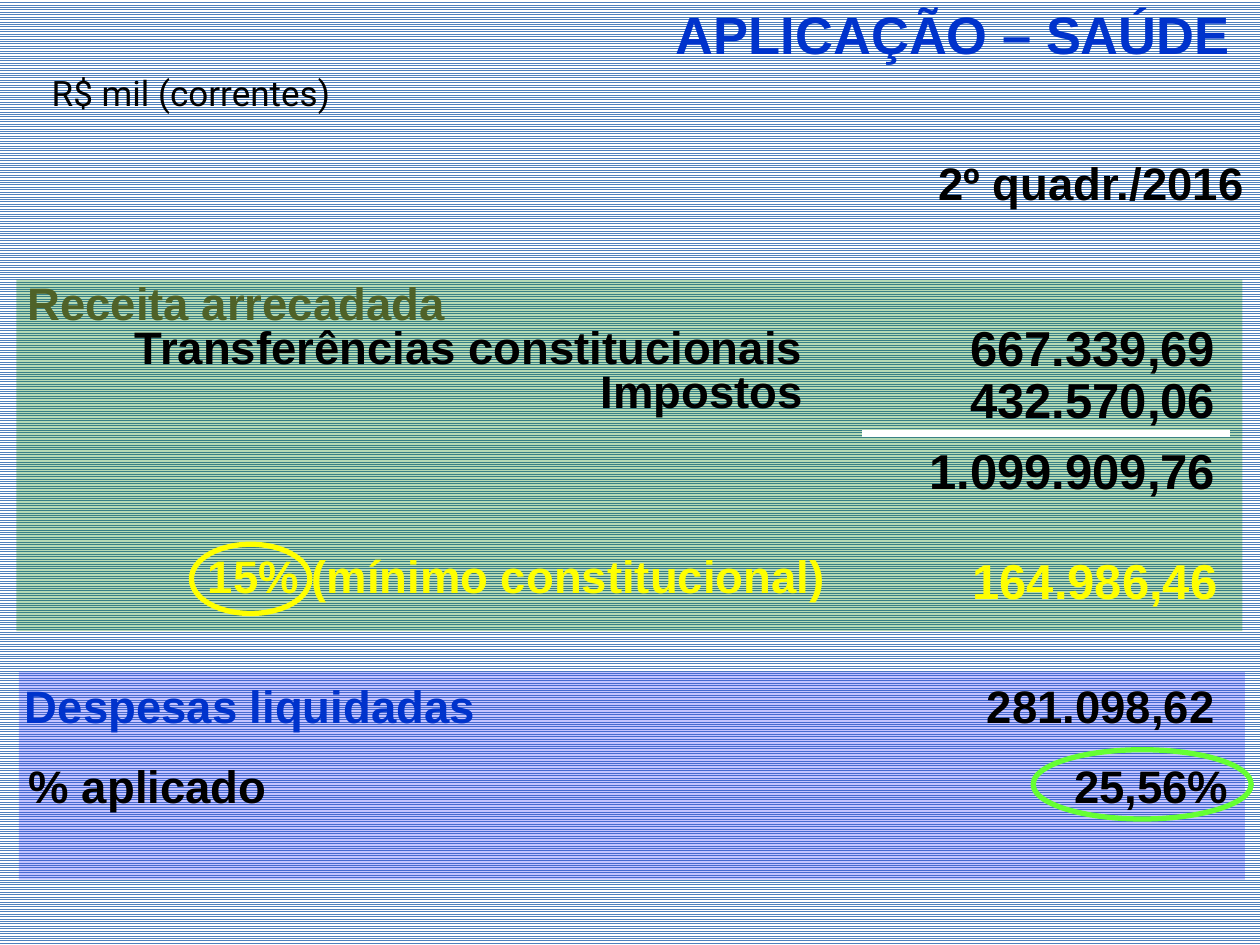
from lxml.etree import SubElement
from pptx import Presentation
from pptx.dml.color import RGBColor
from pptx.enum.dml import MSO_PATTERN
from pptx.enum.shapes import MSO_CONNECTOR, MSO_SHAPE
from pptx.enum.text import MSO_AUTO_SIZE, PP_ALIGN
from pptx.oxml.ns import qn
from pptx.util import Pt

BLACK = RGBColor(0x00, 0x00, 0x00)
WHITE = RGBColor(0xFF, 0xFF, 0xFF)
STRIPE = RGBColor(0x4F, 0x81, 0xBD)
BLUE = RGBColor(0x00, 0x33, 0xCC)
OLIVE = RGBColor(0x4F, 0x62, 0x28)
YELLOW = RGBColor(0xFF, 0xFF, 0x00)
LIME = RGBColor(0x66, 0xFF, 0x33)
REVENUE_FILL = RGBColor(0x00, 0x80, 0x00)
EXPENSE_FILL = RGBColor(0x33, 0x33, 0xFF)


def add_text(slide, box, text, color=BLACK, size=26, align=PP_ALIGN.RIGHT,
             font="Arial", bold=True, wrap=True, spacing=1.0):
    """Add a one-line text box."""
    shape = slide.shapes.add_textbox(*map(Pt, box))
    frame = shape.text_frame
    frame.word_wrap = wrap
    frame.auto_size = MSO_AUTO_SIZE.SHAPE_TO_FIT_TEXT
    paragraph = frame.paragraphs[0]
    paragraph.alignment = align
    paragraph.line_spacing = spacing
    run = paragraph.add_run()
    run.text = text
    run.font.name = font
    run.font.size = Pt(size)
    run.font.bold = bold
    run.font.color.rgb = color


def add_panel(slide, box, color):
    """Add a translucent rectangle."""
    shape = slide.shapes.add_shape(MSO_SHAPE.RECTANGLE, *map(Pt, box))
    shape.shadow.inherit = False
    shape.fill.solid()
    shape.fill.fore_color.rgb = color
    shape.line.fill.background()
    color_element = shape.fill._xPr.find(qn("a:solidFill"))[0]
    SubElement(color_element, qn("a:alpha"), val="29000")


def add_ring(slide, box, color):
    """Add an unfilled ellipse around a figure."""
    shape = slide.shapes.add_shape(MSO_SHAPE.OVAL, *map(Pt, box))
    shape.shadow.inherit = False
    shape.fill.background()
    shape.line.color.rgb = color
    shape.line.width = Pt(3)


def add_sum_line(slide, left, right, y):
    """Add the horizontal rule above a total."""
    line = slide.shapes.add_connector(
        MSO_CONNECTOR.STRAIGHT, Pt(left), Pt(y), Pt(right), Pt(y))
    line.line.color.rgb = WHITE
    line.line.width = Pt(4.5)
    SubElement(line._element.spPr, qn("a:effectLst"))


def add_header(slide, box):
    """Place the title, the unit and the period."""
    left, top, width, height = box
    add_text(slide, (left, top - 2.2, width - 10, 44), "APLICAÇÃO – SAÚDE", BLUE, 30)
    add_text(slide, (left + 20.2, top + 37.4, 175.7, 31.7), "R$ mil (correntes)",
             size=20, font="Roboto", bold=False, wrap=False)
    add_text(slide, (left + width - 206.6, top + 93.6, 204.5, 29.5),
             "2º quadr./2016", spacing=0.7)


def add_revenue(slide, box):
    """Place the revenue panel with its sum and constitutional minimum."""
    left, top, width, height = box
    add_panel(slide, box, REVENUE_FILL)
    add_text(slide, (left - 0.8, top + 2.2, 311.8, 29.5), "Receita arrecadada",
             OLIVE, align=PP_ALIGN.LEFT, spacing=0.7)
    labels = [
        (18.8, 464, "Transferências constitucionais ", BLACK),
        (44, 464, "Impostos ", BLACK),
        (149.8, 469.4, "15% (mínimo constitucional)", YELLOW),
    ]
    for y, right, text, color in labels:
        add_text(slide, (left + 10, top + y, right - 10, 38.2), text, color)
    values = [
        (18, 692, "667.339,69", BLACK),
        (47.6, 692, "432.570,06", BLACK),
        (88.6, 692, "1.099.909,76", BLACK),
        (151.2, 693.3, "164.986,46", YELLOW),
    ]
    for y, right, text, color in values:
        add_text(slide, (left + right - 183, top + y, 183, 41), text, color, 28)
    add_ring(slide, (left + 100, top + 151.2, 67.7, 39.6), YELLOW)
    add_sum_line(slide, left + 483.1, left + 693.3, top + 87.9)


def add_expenses(slide, box):
    """Place the expense panel with the share applied."""
    left, top, width, height = box
    add_panel(slide, box, EXPENSE_FILL)
    rows = [
        (0, -3.6, "Despesas liquidadas", BLUE, 690.5, "281.098,62"),
        (46, -1.4, "% aplicado", BLACK, 698.4, "25,56%"),
    ]
    for y, x, label, color, right, value in rows:
        add_text(slide, (left + x, top + y, 380, 38.2), label, color,
                 align=PP_ALIGN.LEFT)
        add_text(slide, (left + right - 176, top + y, 176, 38.2), value)
    add_ring(slide, (left + 579.6, top + 44.6, 124.6, 39.6), LIME)


def main():
    """Build the slide and save it."""
    presentation = Presentation()
    presentation.slide_width = Pt(720)
    presentation.slide_height = Pt(540)
    slide = presentation.slides.add_slide(presentation.slide_layouts[6])
    background = slide.background.fill
    background.patterned()
    background.pattern = MSO_PATTERN.NARROW_HORIZONTAL
    background.fore_color.rgb = STRIPE
    background.back_color.rgb = WHITE
    add_expenses(slide, (10.8, 383.8, 700.6, 118.8))
    add_revenue(slide, (9.4, 159.8, 700.6, 200.9))
    add_header(slide, (0, 0, 720, 130))
    presentation.save("out.pptx")


if __name__ == "__main__":
    main()
